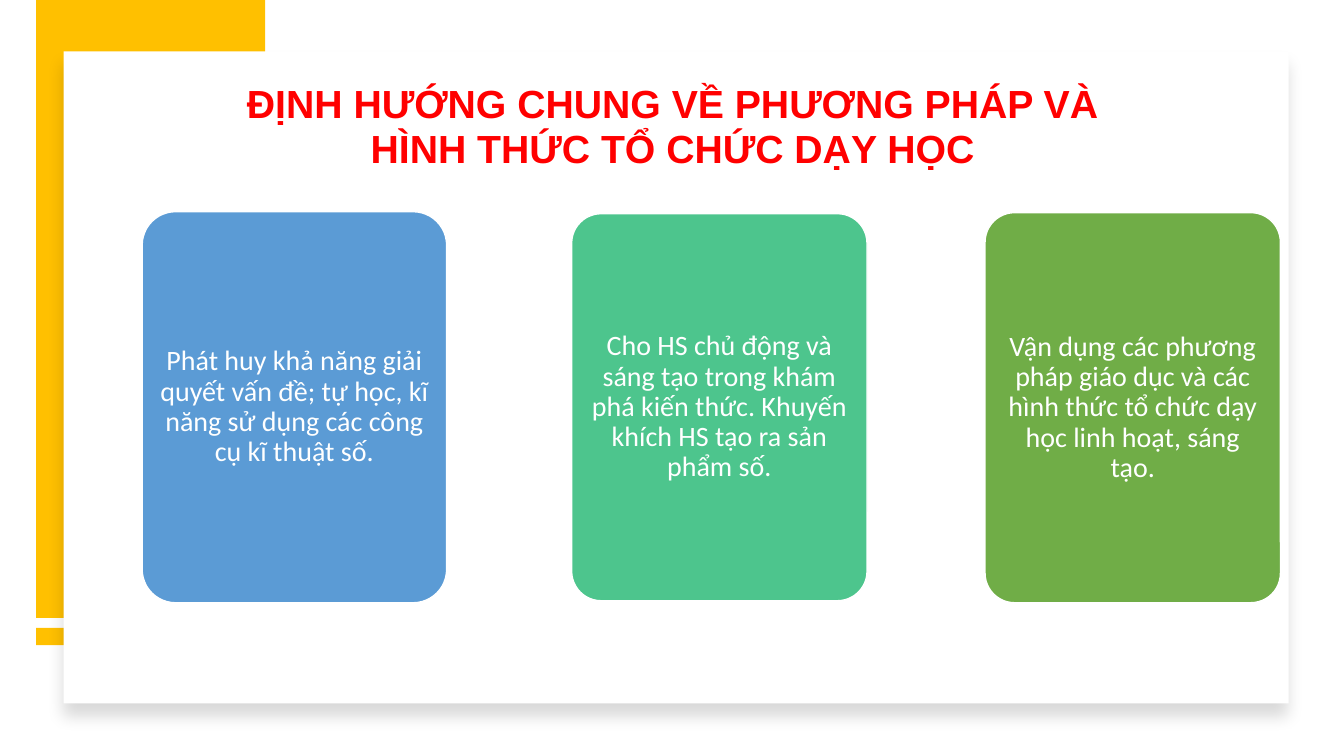
from lxml.etree import SubElement
from pptx import Presentation
from pptx.dml.color import RGBColor
from pptx.enum.shapes import MSO_SHAPE as Preset
from pptx.enum.text import MSO_ANCHOR as Anchor, PP_ALIGN as Align
from pptx.oxml.ns import qn
from pptx.util import Inches, Pt

WHITE = RGBColor(0xFF, 0xFF, 0xFF)
GOLD = RGBColor(0xFF, 0xC0, 0x00)
RED = RGBColor(0xFF, 0x00, 0x00)
BLUE = RGBColor(0x5B, 0x9B, 0xD5)
TEAL = RGBColor(0x4D, 0xC5, 0x8D)
GREEN = RGBColor(0x70, 0xAD, 0x47)

TITLE_FORMAT = {"name": "Arial", "size": Pt(28), "bold": True}
CARD_FORMAT = {"name": "Calibri", "size": Pt(20), "bold": False}

TITLE_LINES = ["ĐỊNH HƯỚNG CHUNG VỀ PHƯƠNG PHÁP VÀ", "HÌNH THỨC TỔ CHỨC DẠY HỌC"]
CARDS = [
    ((1.41, 2.1, 3.02, 3.88), 0.11, BLUE,
     "Phát huy khả năng giải quyết vấn đề; tự học, kĩ năng sử dụng các công cụ kĩ thuật số."),
    ((5.67, 2.12, 2.93, 3.84), 0.1, TEAL,
     "Cho HS chủ động và sáng tạo trong khám phá kiến thức. "
     "Khuyến khích HS tạo ra sản phẩm số."),
    ((9.77, 2.11, 2.93, 3.87), 0.1, GREEN,
     "Vận dụng các phương pháp giáo dục và các hình thức tổ chức dạy học linh hoạt, sáng tạo."),
]


def add_block(slide, box, color, preset=Preset.RECTANGLE):
    """Add a filled shape without outline or shadow."""
    shape = slide.shapes.add_shape(preset, *map(Inches, box))
    shape.shadow.inherit = False
    shape.fill.solid()
    shape.fill.fore_color.rgb = color
    shape.line.fill.background()
    return shape


def add_soft_shadow(shape):
    """Give a shape a faint shadow falling straight down."""
    effects = shape._element.spPr.find(qn("a:effectLst"))
    shadow = SubElement(effects, qn("a:outerShdw"), blurRad=str(Pt(11)),
                        dist=str(Pt(10)), dir="5400000", algn="t", rotWithShape="0")
    color = SubElement(shadow, qn("a:srgbClr"), val="000000")
    SubElement(color, qn("a:alpha"), val="15000")


def write_lines(shape, lines, color, font_format, gap=0):
    """Write centred paragraphs in the middle of a shape."""
    frame = shape.text_frame
    frame.word_wrap = True
    frame.vertical_anchor = Anchor.MIDDLE
    for index, line in enumerate(lines):
        paragraph = frame.add_paragraph() if index else frame.paragraphs[0]
        paragraph.text = line
        paragraph.alignment = Align.CENTER
        paragraph.line_spacing = 0.9
        paragraph.space_before = Pt(gap if index else 0)
        for name, value in font_format.items():
            setattr(paragraph.font, name, value)
        paragraph.font.color.rgb = color


def add_title(slide):
    """Add the two-line heading."""
    box = slide.shapes.add_textbox(Inches(0.92), Inches(0.65), Inches(11.5), Inches(1.24))
    write_lines(box, TITLE_LINES, RED, TITLE_FORMAT, gap=2)


def add_card(slide, box, rounding, color, text):
    """Add a rounded card with its text."""
    card = add_block(slide, box, color, Preset.ROUNDED_RECTANGLE)
    card.adjustments[0] = rounding
    card.line.color.rgb = WHITE
    card.line.width = Pt(1)
    for side in ("left", "top", "right", "bottom"):
        setattr(card.text_frame, f"margin_{side}", Inches(0.08))
    write_lines(card, [text], WHITE, CARD_FORMAT)


def main():
    """Build the slide and save it."""
    presentation = Presentation()
    presentation.slide_width = Inches(13.33)
    presentation.slide_height = Inches(7.5)
    slide = presentation.slides.add_slide(presentation.slide_layouts[6])
    add_block(slide, (0, 0, 13.33, 7.5), WHITE)
    add_block(slide, (0.36, 6.23, 2.27, 0.17), GOLD)
    add_block(slide, (0.36, 0, 2.27, 6.13), GOLD)
    add_soft_shadow(add_block(slide, (0.63, 0.51, 12.15, 6.47), WHITE))
    add_title(slide)
    for card in CARDS:
        add_card(slide, *card)
    presentation.save("out.pptx")


if __name__ == "__main__":
    main()
